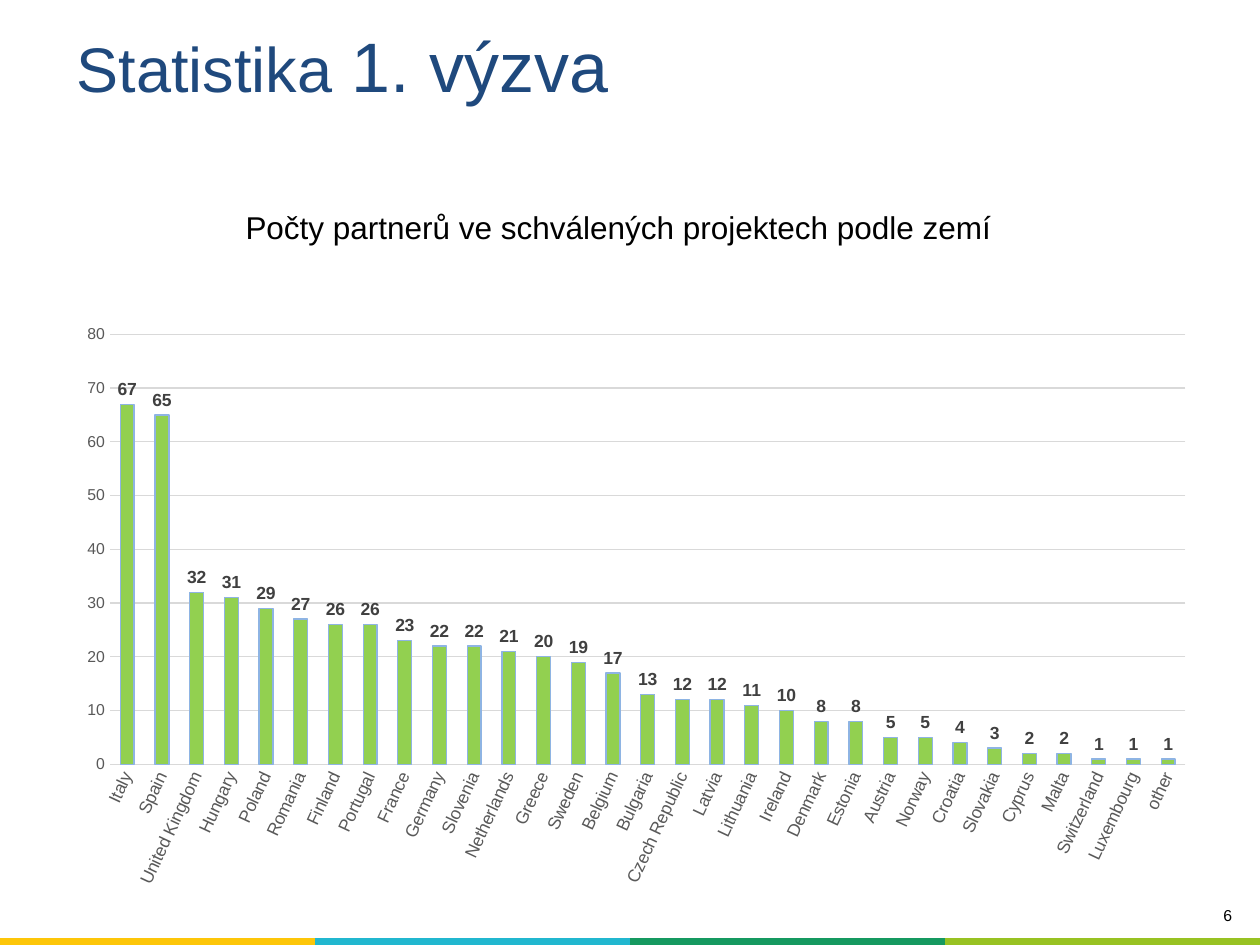
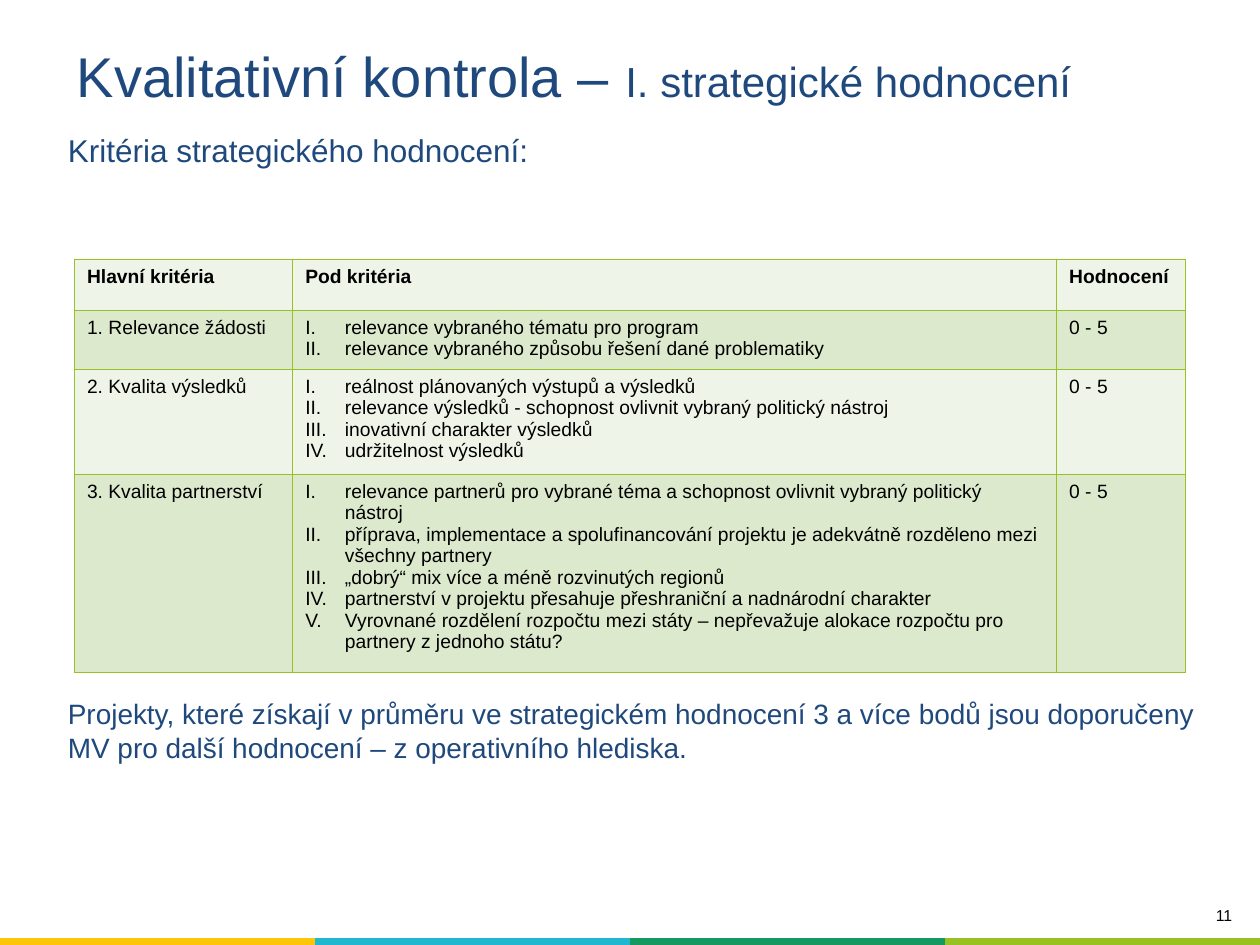
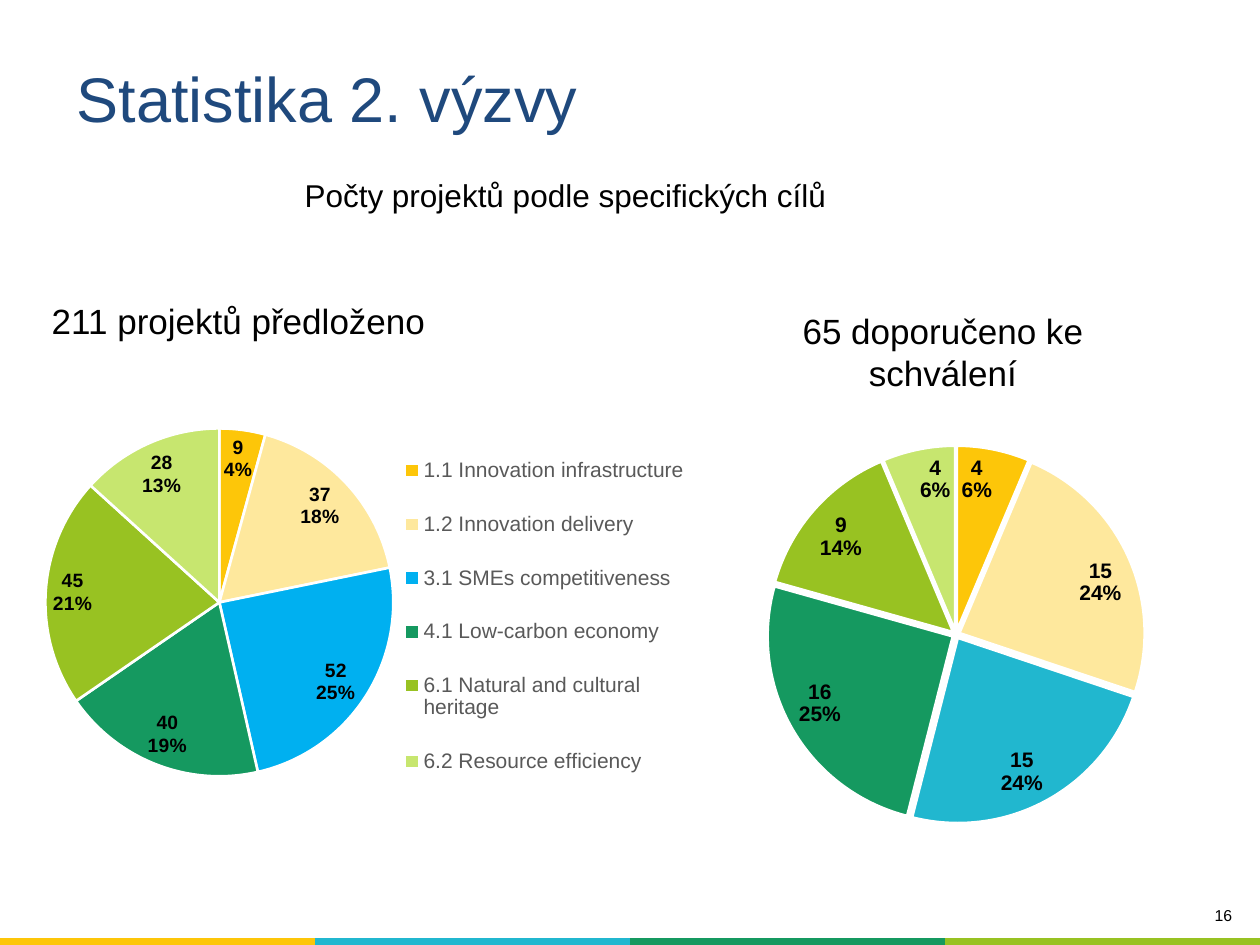
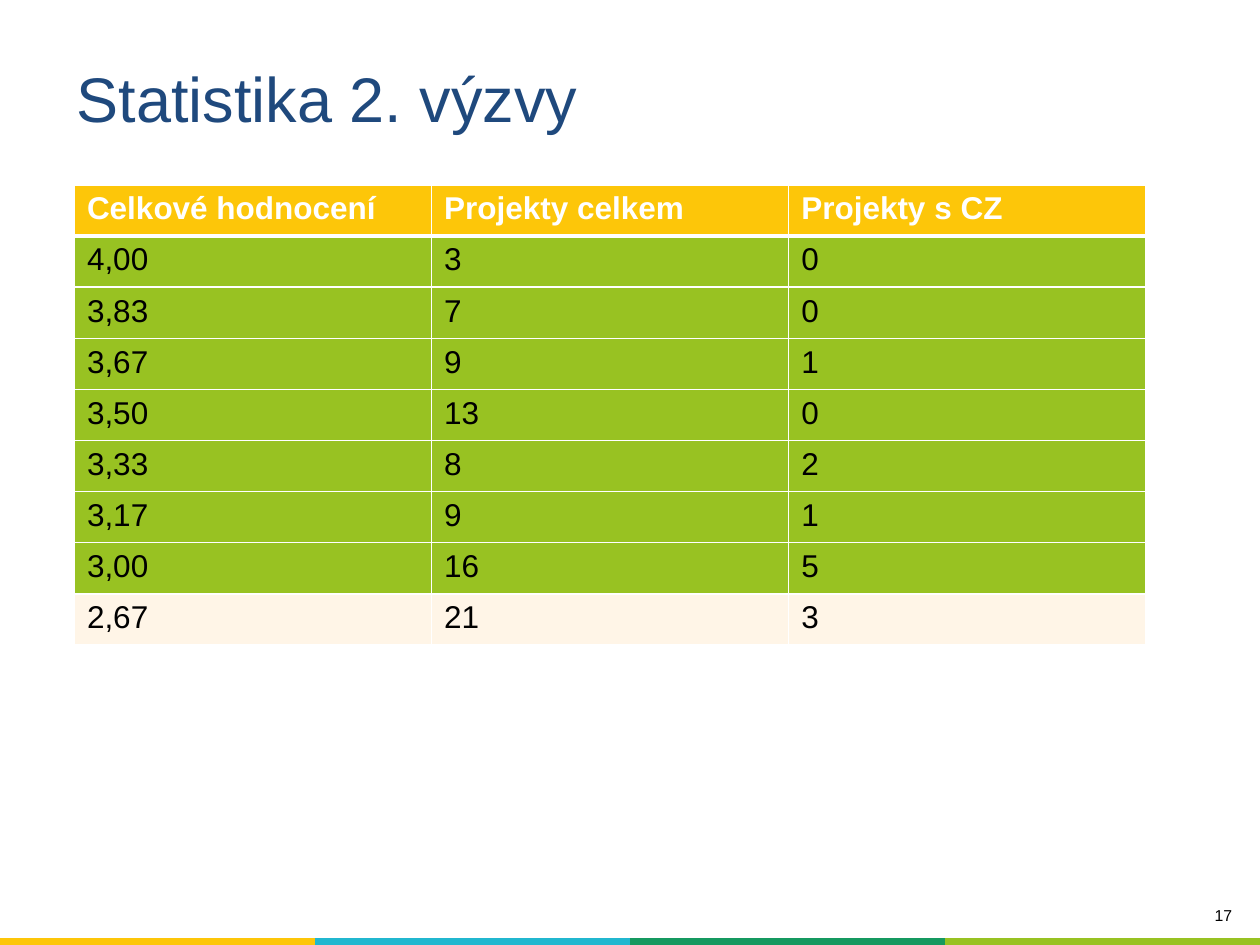
from lxml import etree
from pptx import Presentation
from pptx.chart.data import CategoryChartData
from pptx.dml.color import RGBColor
from pptx.enum.chart import (
    XL_CHART_TYPE, XL_LABEL_POSITION, XL_LEGEND_POSITION, XL_TICK_MARK)
from pptx.enum.text import MSO_ANCHOR, PP_ALIGN
from pptx.oxml.ns import qn
from pptx.util import Cm, Pt

BAR, PIE = XL_CHART_TYPE.COLUMN_CLUSTERED, XL_CHART_TYPE.PIE
FIT, END = XL_LABEL_POSITION.BEST_FIT, XL_LABEL_POSITION.INSIDE_END
OUT = XL_LABEL_POSITION.OUTSIDE_END
BOTTOM = XL_LEGEND_POSITION.BOTTOM
NO_TICK = XL_TICK_MARK.NONE
LEFT, MID, RIGHT = PP_ALIGN.LEFT, PP_ALIGN.CENTER, PP_ALIGN.RIGHT
TOP, CENTER = MSO_ANCHOR.TOP, MSO_ANCHOR.MIDDLE

FACE = "Arial"
BLACK, WHITE, NAVY, GREY = "000000", "FFFFFF", "1F497D", "595959"
GOLD, TEAL, GREEN, LIME = "FDC609", "21B7CF", "159960", "98C222"
CREAM, SKY, MINT = "FEE89D", "00B0F0", "C7E66F"
PLAIN = "{2D5ABB26-0587-4C30-8999-92F81FD0307C}"  # table style without lines
hue = RGBColor.from_string


def write(slide, spot, text, size, color=BLACK, align=LEFT, anchor=TOP):
    """Add a one-paragraph text box at spot (cm) and return its paragraph."""
    frame = slide.shapes.add_textbox(*map(Cm, spot)).text_frame
    frame.word_wrap = True
    frame.vertical_anchor = anchor
    para = frame.paragraphs[0]
    para.text = text
    para.alignment = align
    para.font.name, para.font.size = FACE, Pt(size)
    para.font.color.rgb = hue(color)
    return para


def grid(slide, left, top, cols, rows, cells, fills, size, line=None,
         head=BLACK, rule=1):
    """Add a table; a list in a cell is numbered, rule is the line under the head."""
    shape = slide.shapes.add_table(len(rows), len(cols), Cm(left), Cm(top),
                                   Cm(sum(cols)), Cm(sum(rows)))
    shape.element.find(".//" + qn("a:tableStyleId")).text = PLAIN
    table = shape.table
    table.horz_banding = False
    for col, wide in zip(table.columns, cols):
        col.width = Cm(wide)
    for r, high in enumerate(rows):
        table.rows[r].height = Cm(high)
        for c, item in enumerate(cells[r]):
            cell = table.cell(r, c)
            if line:
                props = cell._tc.get_or_add_tcPr()
                for side in "LRTB":
                    thick = rule if (r, side) in ((0, "B"), (1, "T")) else 1
                    edge = etree.SubElement(props, qn("a:ln" + side), w=str(Pt(thick)))
                    solid = etree.SubElement(edge, qn("a:solidFill"))
                    etree.SubElement(solid, qn("a:srgbClr"), val=line)
            cell.fill.solid()
            cell.fill.fore_color.rgb = hue(fills[r][c])
            many = isinstance(item, list)
            cell.text = "\n".join(item) if many else item
            for para in cell.text_frame.paragraphs:
                if many:
                    props = para._p.get_or_add_pPr()
                    props.set("marL", str(Cm(0.8)))
                    props.set("indent", str(-Cm(0.8)))
                    etree.SubElement(props, qn("a:buAutoNum"), type="romanUcPeriod")
                para.font.name, para.font.size = FACE, Pt(size)
                para.font.bold = r == 0
                para.font.color.rgb = hue(BLACK if r else head)


deck = Presentation()
deck.slide_width, deck.slide_height = Cm(25.4), Cm(19.05)

# Shared title, colour band and page number
pages = [
    ("6", 0.53, "Statistika", 36, " 1. výzva", 40),
    ("11", 0.74, "Kvalitativní kontrola – ", 32, "I. strategické hodnocení", 24),
    ("16", 1.19, "Statistika 2. výzvy", 36, "", 0),
    ("17", 1.19, "Statistika 2. výzvy", 36, "", 0),
]
slides = []
for num, top, text, size, more, big in pages:
    slide = deck.slides.add_slide(deck.slide_layouts[6])
    grid(slide, 0, 18.9, [6.35] * 4, [0.43], [[""] * 4],
         [[GOLD, TEAL, GREEN, LIME]], 9)
    write(slide, (20.09, 18.14, 5, 0.79), num, 9, align=RIGHT)
    para = write(slide, (1.3, top, 21.59, 1.55), text, size, NAVY, anchor=CENTER)
    if more:
        run = para.add_run()
        run.text = more
        run.font.size = Pt(big)
    slides.append(slide)
lands, rules, goals, marks = slides

# Partners by country
write(lands, (4.7, 4.06, 15.7, 1.02),
      "Počty partnerů ve schválených projektech podle zemí", 18)
counts = {
    "Italy": 67, "Spain": 65, "United Kingdom": 32, "Hungary": 31, "Poland": 29,
    "Romania": 27, "Finland": 26, "Portugal": 26, "France": 23, "Germany": 22,
    "Slovenia": 22, "Netherlands": 21, "Greece": 20, "Sweden": 19, "Belgium": 17,
    "Bulgaria": 13, "Czech Republic": 12, "Latvia": 12, "Lithuania": 11,
    "Ireland": 10, "Denmark": 8, "Estonia": 8, "Austria": 5, "Norway": 5,
    "Croatia": 4, "Slovakia": 3, "Cyprus": 2, "Malta": 2, "Switzerland": 1,
    "Luxembourg": 1, "other": 1,
}
data = CategoryChartData()
data.categories = list(counts)
data.add_series("Series 1", list(counts.values()))
chart = lands.shapes.add_chart(BAR, Cm(1.3), Cm(6.32), Cm(23.06), Cm(11.81), data).chart
chart.has_title = chart.has_legend = False
chart.font.name, chart.font.size = FACE, Pt(10)
for axis, size in ((chart.category_axis, 10), (chart.value_axis, 9)):
    axis.major_tick_mark = axis.minor_tick_mark = NO_TICK
    axis.format.line.fill.background()
    font = axis.tick_labels.font
    font.name, font.size = FACE, Pt(size)
    font.color.rgb = hue(GREY)
turn = chart.category_axis._element.find(".//" + qn("a:bodyPr"))
turn.set("rot", str(-65 * 60000))
turn.set("vert", "horz")
chart.value_axis.maximum_scale, chart.value_axis.major_unit = 80, 10
line = chart.value_axis.major_gridlines.format.line
line.color.rgb, line.width = hue("D9D9D9"), Pt(0.75)
plot = chart.plots[0]
plot.gap_width = 150
plot.vary_by_categories = False
bars = plot.series[0].format
bars.fill.solid()
bars.fill.fore_color.rgb = hue("92D050")
bars.line.color.rgb, bars.line.width = hue("8EB4E3"), Pt(0.75)
plot.has_data_labels = True
tags = plot.data_labels
tags.show_value, tags.position = True, OUT
tags.font.name, tags.font.size, tags.font.bold = FACE, Pt(10), True
tags.font.color.rgb = hue("404040")

# Strategic criteria
write(rules, (1.12, 2.51, 22.4, 3.68), "Kritéria strategického hodnocení:", 18, NAVY)
cells = [
    ["Hlavní kritéria", "Pod kritéria", "Hodnocení"],
    ["1. Relevance žádosti",
     ["relevance vybraného tématu pro program",
      "relevance vybraného způsobu řešení dané problematiky"], "0 - 5"],
    ["2. Kvalita výsledků",
     ["reálnost plánovaných výstupů a výsledků",
      "relevance výsledků - schopnost ovlivnit vybraný politický nástroj",
      "inovativní charakter výsledků",
      "udržitelnost výsledků"], "0 - 5"],
    ["3. Kvalita partnerství",
     ["relevance partnerů pro vybrané téma a schopnost ovlivnit vybraný "
      "politický nástroj",
      "příprava, implementace a spolufinancování projektu je adekvátně "
      "rozděleno mezi všechny partnery",
      "„dobrý“ mix více a méně rozvinutých regionů",
      "partnerství v projektu přesahuje přeshraniční a nadnárodní charakter",
      "Vyrovnané rozdělení rozpočtu mezi státy – nepřevažuje alokace rozpočtu "
      "pro partnery z jednoho státu?"], "0 - 5"],
]
grid(rules, 1.5, 5.23, [4.4, 15.4, 2.6], [1.03, 1.19, 2.12, 3.97], cells,
     [["EFF4E8"] * 3, ["DDE9CD"] * 3] * 2, 11, LIME)
write(rules, (1.12, 13.92, 23.37, 2.31),
      "Projekty, které získají v průměru ve strategickém hodnocení 3 a více bodů "
      "jsou doporučeny MV pro další hodnocení – z operativního hlediska.", 16, NAVY)

# Projects by goal
names = ["1.1 Innovation infrastructure", "1.2 Innovation delivery",
         "3.1 SMEs competitiveness", "4.1 Low-carbon economy",
         "6.1 Natural and cultural heritage", "6.2 Resource efficiency"]
pies = [
    ((0.51, 7.52, 13.49, 9.25), names, [9, 37, 52, 40, 45, 28], SKY, 11, FIT, 0,
     (0.03, 0.12, 0.52, 0.76)),
    ((12.67, 7.52, 12.7, 9.42), list("123456"), [4, 15, 15, 16, 9, 4], TEAL, 12, END, 2,
     (0.22, 0.15, 0.6, 0.82)),
]
for spot, cats, vals, third, size, place, burst, area in pies:
    data = CategoryChartData()
    data.categories = cats
    data.add_series("Series 1", vals)
    chart = goals.shapes.add_chart(PIE, *map(Cm, spot), data).chart
    chart.has_title = False
    chart.has_legend = cats is names
    chart.font.name, chart.font.size = FACE, Pt(10)
    plot = chart.plots[0]
    plot.vary_by_categories = True
    ring = plot.series[0]
    if burst:
        push = etree.Element(qn("c:explosion"), val=str(burst))
        ring._element.find(qn("c:tx")).addnext(push)
    for i, color in enumerate([GOLD, CREAM, third, GREEN, LIME, MINT]):
        slice_ = ring.points[i].format
        slice_.fill.solid()
        slice_.fill.fore_color.rgb = hue(color)
        slice_.line.color.rgb, slice_.line.width = hue(WHITE), Pt(1.5)
    plot.has_data_labels = True
    tags = plot.data_labels
    tags.show_value = tags.show_percentage = True
    tags.position = place
    tags.font.name, tags.font.size, tags.font.bold = FACE, Pt(size), True
    tags.font.color.rgb = hue(BLACK)
    split = etree.Element(qn("c:separator"))
    split.text = "\n"
    tags._element.find(qn("c:showBubbleSize")).addnext(split)
    parts = [(chart._chartSpace.find(".//" + qn("c:plotArea")), 0, area)]
    if chart.has_legend:
        key = chart.legend
        key.position, key.include_layout = BOTTOM, False
        key.font.name, key.font.size = FACE, Pt(12)
        key.font.color.rgb = hue(GREY)
        parts.append((key._element, 1, (0.57, 0.12, 0.43, 0.82)))
    for node, slot, frame in parts:
        for old in node.findall(qn("c:layout")):
            node.remove(old)
        outer = etree.Element(qn("c:layout"))
        inner = etree.SubElement(outer, qn("c:manualLayout"))
        if slot == 0:
            etree.SubElement(inner, qn("c:layoutTarget"), val="inner")
        for mode in ("xMode", "yMode"):
            etree.SubElement(inner, qn("c:" + mode), val="edge")
        for dim, part in zip("xywh", frame):
            etree.SubElement(inner, qn("c:" + dim), val=str(part))
        node.insert(slot, outer)
write(goals, (0.71, 5.92, 8.2, 1.85), "211 projektů předloženo", 20, align=MID)
write(goals, (14.91, 6.12, 8.2, 1.85), "65 doporučeno ke schválení", 20, align=MID)
write(goals, (5.89, 3.43, 11.13, 1.02), "Počty projektů podle specifických cílů", 18)

# Scores
cells = [
    ["Celkové hodnocení", "Projekty celkem", "Projekty s CZ"],
    ["4,00", "3", "0"],
    ["3,83", "7", "0"],
    ["3,67", "9", "1"],
    ["3,50", "13", "0"],
    ["3,33", "8", "2"],
    ["3,17", "9", "1"],
    ["3,00", "16", "5"],
    ["2,67", "21", "3"],
]
grid(marks, 1.5, 3.73, [7.2] * 3, [1.03] * 9, cells,
     [[GOLD] * 3] + [[LIME] * 3] * 7 + [["FFF5E7"] * 3], 18, WHITE, WHITE, 3)

deck.save("out.pptx")
